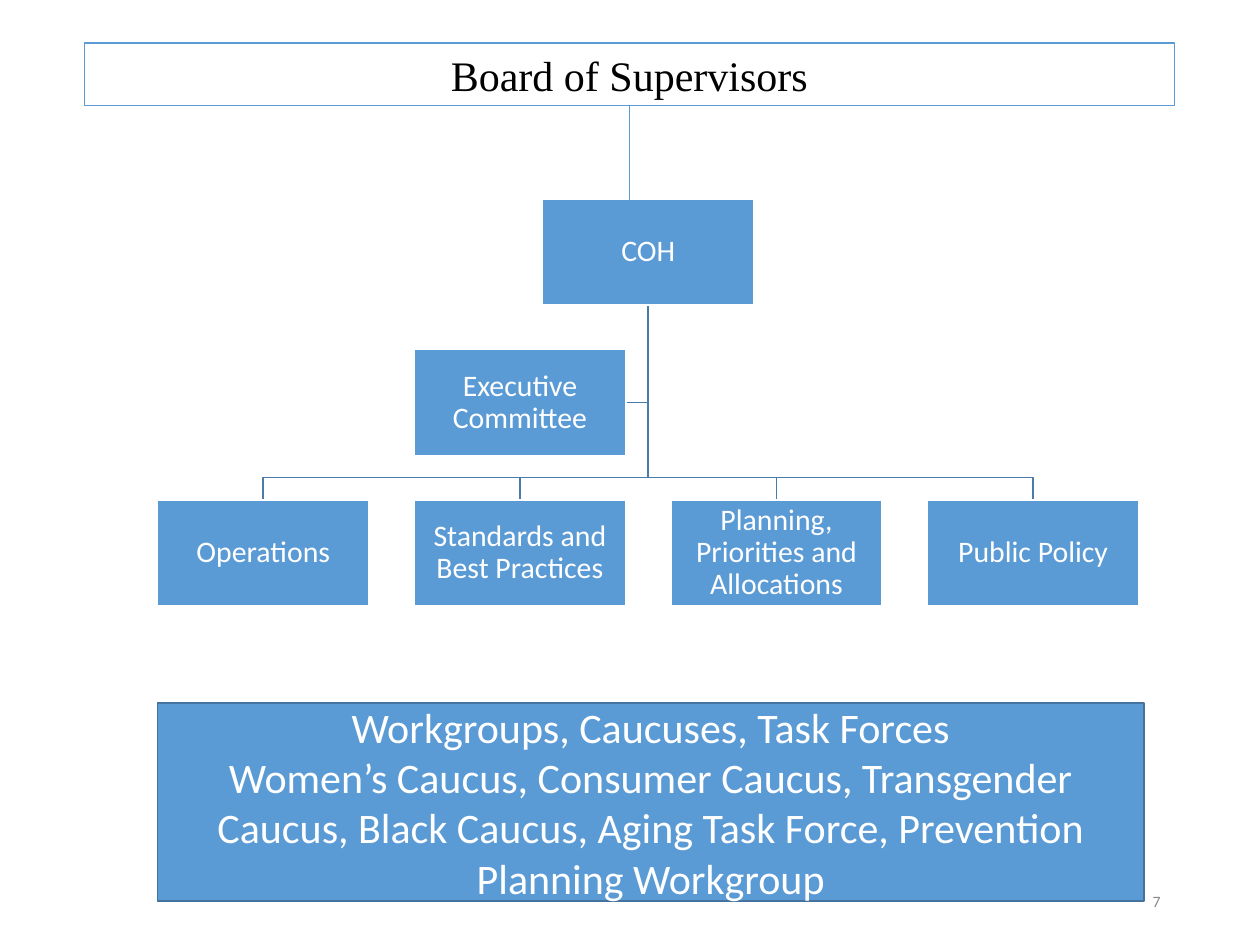
from lxml import etree
from pptx import Presentation
from pptx.dml.color import RGBColor
from pptx.enum.shapes import MSO_CONNECTOR as CONN, MSO_SHAPE as SHAPE
from pptx.enum.text import MSO_ANCHOR as ANCHOR, MSO_AUTO_SIZE as AUTO, PP_ALIGN as ALIGN
from pptx.oxml.ns import qn
from pptx.util import Pt

PX = 9144
COLORS = {
    "blue": "5B9BD5",
    "branch": "497CAB",
    "edge": "43739E",
    "white": "FFFFFF",
    "black": "000000",
    "gray": "898989",
}
COMMITTEES = [
    "Operations",
    "Standards and Best Practices",
    "Planning, Priorities and Allocations",
    "Public Policy",
]
WORKGROUPS = [
    "Workgroups, Caucuses, Task Forces",
    "Women’s Caucus, Consumer Caucus, Transgender Caucus, Black Caucus, "
    "Aging Task Force, Prevention Planning Workgroup",
]


def px(*values):
    return [round(v * PX) for v in values]


def rgb(name):
    return RGBColor.from_string(COLORS[name])


def set_line(sp, color, width):
    sp.line.color.rgb = rgb(color)
    sp.line.width = Pt(width)


def set_text(sp, text, size=17, font="Calibri", color="white", align=ALIGN.CENTER,
             anchor=ANCHOR.MIDDLE, spacing=1.0, inset=None):
    tf = sp.text_frame
    tf.word_wrap = True
    tf.auto_size = AUTO.NONE
    tf.vertical_anchor = anchor
    if inset is not None:
        tf.margin_left = tf.margin_top = tf.margin_right = tf.margin_bottom = inset * PX
    tf.text = text
    for p in tf.paragraphs:
        p.alignment = align
        p.line_spacing = spacing
        f = p.runs[0].font
        f.size, f.name, f.color.rgb = Pt(size), font, rgb(color)


def add_box(s, box, text, edge, **fmt):
    sp = s.shapes.add_shape(SHAPE.RECTANGLE, *px(*box))
    sp.shadow.inherit = False
    sp.fill.solid()
    sp.fill.fore_color.rgb = rgb("blue")
    set_line(sp, edge, 1)
    set_text(sp, text, **fmt)
    return sp


def add_branch(s, points):
    start, *rest = [px(*point) for point in points]
    builder = s.shapes.build_freeform(*start, scale=1.0)
    builder.add_line_segments(rest, close=False)
    sp = builder.convert_to_shape()
    sp.shadow.inherit = False
    sp.fill.background()
    set_line(sp, "branch", 1)


def add_org_chart(s, left, top, width, height):
    node_w, node_h, drop = 168, 84, 18
    pitch = (width - node_w) / (len(COMMITTEES) - 1)
    row = (height - node_h) / 2
    root_x = left + (width - node_w) / 2
    mid_x, root_bottom = left + width / 2, top + node_h
    exec_x, exec_y = left + pitch, top + row
    last_y = top + 2 * row
    columns = [left + i * pitch for i in range(len(COMMITTEES))]

    exec_mid = exec_y + node_h / 2
    add_branch(s, [(mid_x, root_bottom), (mid_x, exec_mid), (exec_x + node_w, exec_mid)])
    for x in columns:
        center = x + node_w / 2
        add_branch(s, [(mid_x, root_bottom), (mid_x, last_y - drop),
                       (center, last_y - drop), (center, last_y)])

    nodes = [("COH", root_x, top), ("Executive Committee", exec_x, exec_y)]
    nodes += [(name, x, last_y) for name, x in zip(COMMITTEES, columns)]
    for name, x, y in nodes:
        add_box(s, (x, y, node_w, node_h), name, "white", spacing=0.9, inset=1)


def add_board(s, left, top, width, height):
    sp = s.shapes.title
    sp.left, sp.top, sp.width, sp.height = px(left, top, width, height)
    set_line(sp, "blue", 0.75)
    set_text(sp, "Board of Supervisors", size=24, font="Times New Roman",
             color="black", anchor=ANCHOR.TOP)
    return sp


def add_board_arrow(s, board, x, top, bottom):
    line = s.shapes.add_connector(CONN.STRAIGHT, *px(x, top, x, bottom))
    line.begin_connect(board, 2)
    line.end_x = line.begin_x
    set_line(line, "blue", 0.5)
    ln = line.line._get_or_add_ln()
    etree.SubElement(ln, qn("a:tailEnd"), type="triangle")
    etree.SubElement(line._element.spPr, qn("a:effectLst"))


def add_page_number(s, left, top, width, height):
    sp = s.shapes.add_textbox(*px(left, top, width, height))
    set_text(sp, "7", size=9, color="gray", align=ALIGN.RIGHT)


def main():
    prs = Presentation()
    prs.slide_width, prs.slide_height = px(1000, 750)
    s = prs.slides.add_slide(prs.slide_layouts[5])
    board = add_board(s, 67, 34, 865, 50)
    add_org_chart(s, 125, 158, 779, 323)
    add_box(s, (125, 558, 783, 157), "\n".join(WORKGROUPS), "edge", size=24)
    add_page_number(s, 706, 695, 225, 40)
    add_board_arrow(s, board, 500, 85, 175)
    prs.save("out.pptx")


if __name__ == "__main__":
    main()
